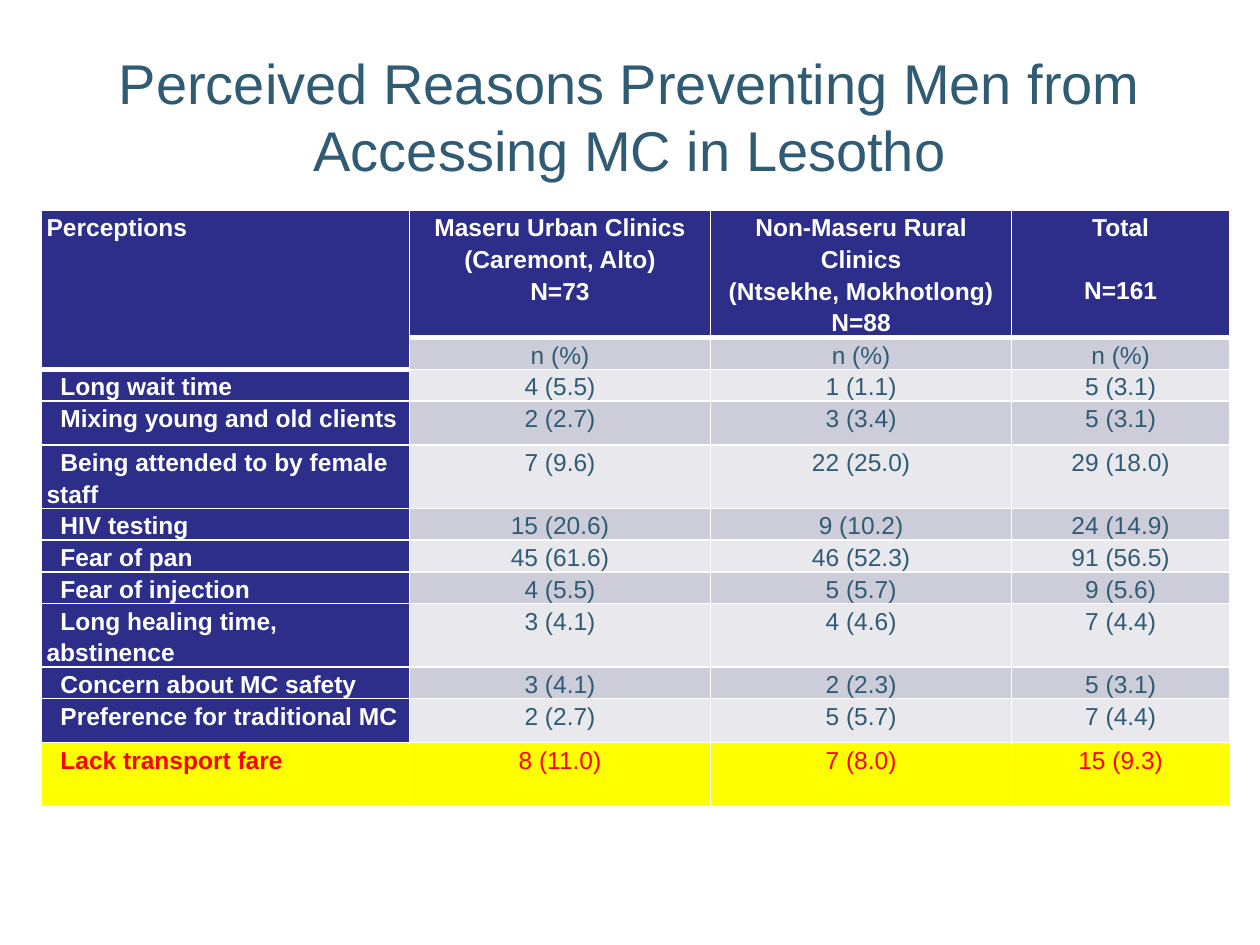
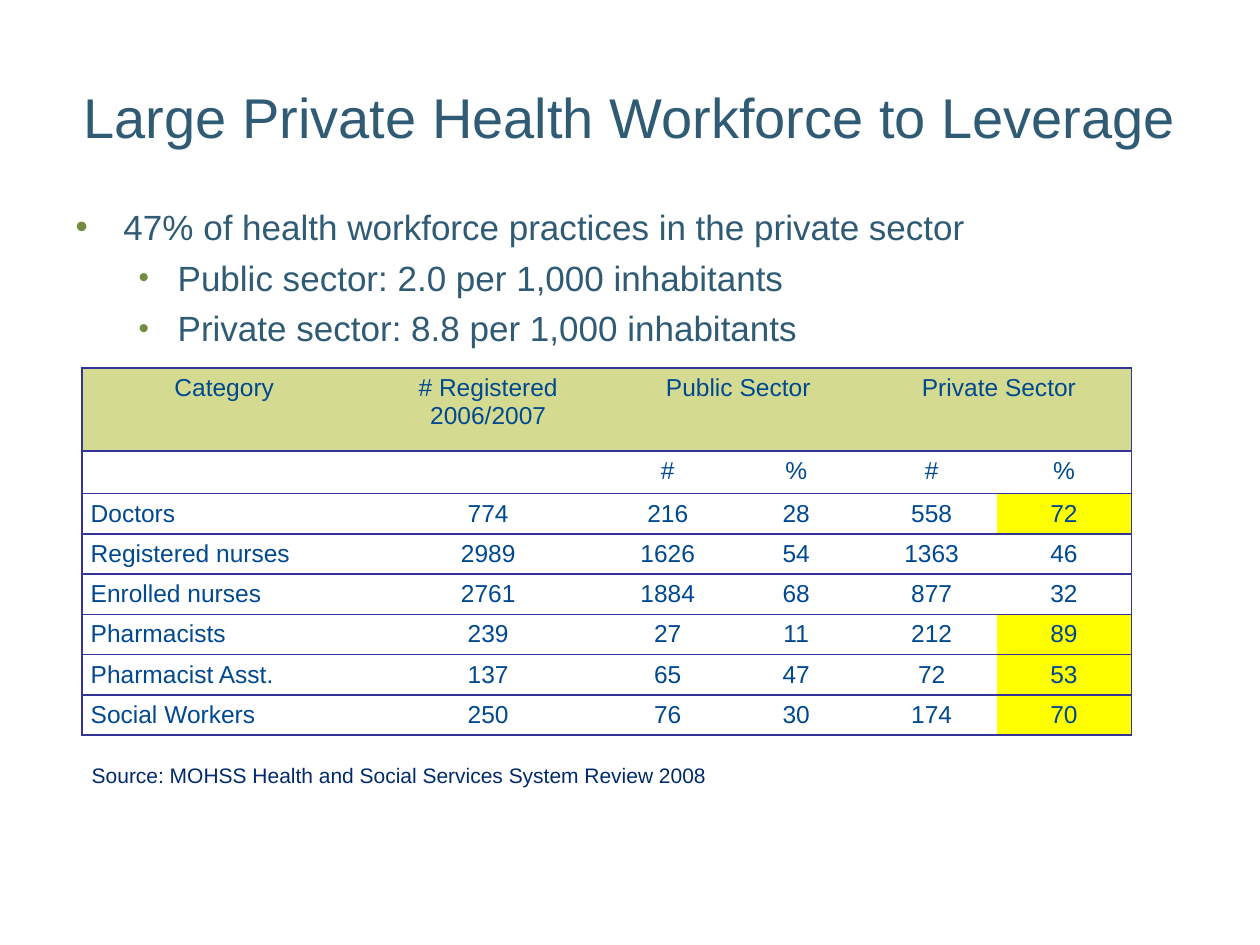
from lxml import etree
from pptx import Presentation
from pptx.dml.color import RGBColor
from pptx.enum.text import MSO_ANCHOR, MSO_AUTO_SIZE, PP_ALIGN
from pptx.oxml.ns import qn
from pptx.util import Inches, Pt

LEFT, CENTER = PP_ALIGN.LEFT, PP_ALIGN.CENTER
MIDDLE, TOP = MSO_ANCHOR.MIDDLE, MSO_ANCHOR.TOP
NO_FIT = MSO_AUTO_SIZE.NONE
TITLE_AND_BODY, TITLE_ONLY = 1, 5

COLORS = {
    "slate": "305B75", "white": "FFFFFF", "indigo": "2D2D8A",
    "band_dark": "CDCDDA", "band_light": "E8E8ED", "yellow": "FFFF00",
    "red": "FF0000", "bullet": "718C3F", "olive": "D4DB90",
    "blue": "004990", "rule": "333399", "navy": "002A6C",
}


class Deck:
    font = "Arial"

    def __init__(self):
        self.prs = Presentation()
        self.prs.slide_width, self.prs.slide_height = Inches(10), Inches(7.5)
        self.slide = None

    def place(self, shape, left, top, width, height):
        shape.left, shape.top = Inches(left), Inches(top)
        shape.width, shape.height = Inches(width), Inches(height)

    def run(self, paragraph, text, size, color, bold=False):
        run = paragraph.add_run()
        run.text = text
        run.font.name, run.font.size, run.font.bold = self.font, Pt(size), bold
        run.font.color.rgb = RGBColor.from_string(COLORS[color])

    def start(self, layout, title):
        self.slide = self.prs.slides.add_slide(self.prs.slide_layouts[layout])
        heading = self.slide.shapes.title
        self.place(heading, 0.5, 0.42, 9, 1)
        frame = heading.text_frame
        frame.auto_size, frame.vertical_anchor = NO_FIT, MIDDLE
        frame.paragraphs[0].alignment = CENTER
        self.run(frame.paragraphs[0], title, 32, "slate")

    def bullets(self, box, items):
        body = self.slide.placeholders[1]
        self.place(body, *box)
        frame = body.text_frame
        frame.auto_size, frame.vertical_anchor = NO_FIT, TOP
        for index, (level, text) in enumerate(items):
            paragraph = frame.add_paragraph() if index else frame.paragraphs[0]
            paragraph.level = level
            paragraph.space_before = Pt(5 if index else 0)
            margin, hanging, percent = ((0.38, 0.38, 100), (0.81, 0.31, 85))[level]
            props = paragraph._p.get_or_add_pPr()
            props.set("marL", str(Inches(margin)))
            props.set("indent", str(-Inches(hanging)))
            tint = etree.SubElement(props, qn("a:buClr"))
            etree.SubElement(tint, qn("a:srgbClr"), val=COLORS["bullet"])
            etree.SubElement(props, qn("a:buSzPct"), val=str(percent * 1000))
            etree.SubElement(props, qn("a:buFont"), typeface=self.font)
            etree.SubElement(props, qn("a:buChar"), char="•")
            self.run(paragraph, text, 20, "slate")

    def note(self, box, text):
        frame = self.slide.shapes.add_textbox(*map(Inches, box)).text_frame
        frame.word_wrap = True
        self.run(frame.paragraphs[0], text, 12, "navy")

    def table(self, left, top, widths, heights):
        table = self.slide.shapes.add_table(
            len(heights), len(widths), Inches(left), Inches(top),
            Inches(sum(widths)), Inches(sum(heights))).table
        table.first_row = table.horz_banding = False
        for column, width in zip(table.columns, widths):
            column.width = Inches(width)
        for row, height in zip(table.rows, heights):
            row.height = Inches(height)
        return table

    def cell(self, cell, lines, fill, color, borders, margins, line_color,
             bold=False, align=CENTER, spacing=1.0, indent=0, gap_before=None):
        props = cell._tc.get_or_add_tcPr()
        for side, width in zip("LRTB", borders):
            line = etree.SubElement(props, qn(f"a:ln{side}"), w=str(Pt(width)))
            if width:
                solid = etree.SubElement(line, qn("a:solidFill"))
                etree.SubElement(solid, qn("a:srgbClr"), val=COLORS[line_color])
            else:
                etree.SubElement(line, qn("a:noFill"))
        cell.fill.solid()
        cell.fill.fore_color.rgb = RGBColor.from_string(COLORS[fill])
        cell.margin_left = cell.margin_right = Inches(margins[0])
        cell.margin_top = cell.margin_bottom = Inches(margins[1])
        frame = cell.text_frame
        for index, text in enumerate(lines or [""]):
            paragraph = frame.add_paragraph() if index else frame.paragraphs[0]
            paragraph.alignment, paragraph.line_spacing = align, spacing
            if indent:
                paragraph._p.get_or_add_pPr().set("indent", str(Inches(indent)))
            if index and gap_before:
                paragraph.space_before = Pt(gap_before)
            if text:
                self.run(paragraph, text, 14, color, bold)
            else:
                etree.SubElement(paragraph._p, qn("a:endParaRPr"), sz="1400")


def perceptions_slide(deck):
    deck.start(TITLE_ONLY, "Perceived Reasons Preventing Men from Accessing MC in Lesotho")
    header = [
        ["Perceptions"],
        ["Maseru Urban Clinics", "(Caremont, Alto)", "N=73"],
        ["Non-Maseru Rural Clinics", "(Ntsekhe, Mokhotlong)", "N=88"],
        ["Total", "N=161"],
    ]
    reasons = [
        ("Long wait time", "4 (5.5)", "1 (1.1)", "5 (3.1)"),
        ("Mixing young and old clients", "2 (2.7)", "3 (3.4)", "5 (3.1)"),
        ("Being attended to by female staff", "7 (9.6)", "22 (25.0)", "29 (18.0)"),
        ("HIV testing", "15 (20.6)", "9 (10.2)", "24 (14.9)"),
        ("Fear of pan", "45 (61.6)", "46 (52.3)", "91 (56.5)"),
        ("Fear of injection", "4 (5.5)", "5 (5.7)", "9 (5.6)"),
        ("Long healing time, abstinence", "3 (4.1)", "4 (4.6)", "7 (4.4)"),
        ("Concern about MC safety", "3 (4.1)", "2 (2.3)", "5 (3.1)"),
        ("Preference for traditional MC", "2 (2.7)", "5 (5.7)", "7 (4.4)"),
        ("Lack transport fare", "8 (11.0)", "7 (8.0)", "15 (9.3)"),
    ]
    units = [[]] + [["n (%)"]] * 3
    rows = [header, units] + [[[text] for text in reason] for reason in reasons]
    heights = [1.01, 0.25, 0.25, 0.35, 0.5, 0.25, 0.25, 0.25, 0.5, 0.25, 0.35, 0.5]
    table = deck.table(0.33, 1.67, [2.92, 2.39, 2.39, 1.73], heights)
    table.cell(0, 0).merge(table.cell(1, 0))

    def rule_below(row, col):
        return 3 if row == 0 or (row, col) == (1, 0) else 1

    for r, row in enumerate(rows):
        for c, lines in enumerate(row):
            is_label = c == 0
            if r == len(rows) - 1:
                fill, color = "yellow", "red"
            elif r == 0 or is_label:
                fill, color = "indigo", "white"
            else:
                fill, color = ("band_light", "band_dark")[r % 2], "slate"
            deck.cell(
                table.cell(r, c), lines, fill, color,
                (1, 1, rule_below(r - 1, c), rule_below(r, c)), (0.04, 0), "white",
                bold=r == 0 or is_label, align=LEFT if is_label else CENTER,
                spacing=1.15, indent=0.11 if is_label and r > 1 else 0,
                gap_before=18 if lines and lines[0] == "Total" else None)


def workforce_slide(deck):
    deck.start(TITLE_AND_BODY, "Large Private Health Workforce to Leverage")
    deck.bullets((0.5, 1.58, 9, 4.5), [
        (0, "47% of health workforce practices in the private sector"),
        (1, "Public sector: 2.0 per 1,000 inhabitants"),
        (1, "Private sector: 8.8 per 1,000 inhabitants"),
    ])
    rows = [
        ("Category", "# Registered 2006/2007", "Public Sector", "", "Private Sector", ""),
        ("", "", "#", "%", "#", "%"),
        ("Doctors", 774, 216, 28, 558, 72),
        ("Registered nurses", 2989, 1626, 54, 1363, 46),
        ("Enrolled nurses", 2761, 1884, 68, 877, 32),
        ("Pharmacists", 239, 27, 11, 212, 89),
        ("Pharmacist Asst.", 137, 65, 47, 72, 53),
        ("Social Workers", 250, 76, 30, 174, 70),
    ]
    table = deck.table(0.65, 2.92, [2.26, 1.93, 0.92, 1.12, 1.03, 1.07],
                       [0.66] + [0.32] * (len(rows) - 1))
    for first in (2, 4):
        table.cell(0, first).merge(table.cell(0, first + 1))
    last = len(rows[0]) - 1
    for r, row in enumerate(rows):
        for c, value in enumerate(row):
            private_majority = r > 1 and c == last and value > 50
            fill = "olive" if r == 0 else "yellow" if private_majority else "white"
            right_edge = c == last or (r == 0 and c == last - 1)
            deck.cell(
                table.cell(r, c), [str(value)], fill, "blue",
                (int(c == 0), int(right_edge), 1, 1), (0.07, 0.05), "rule",
                align=LEFT if c == 0 and r > 1 else CENTER)
    deck.note((0.63, 6, 6.67, 0.3),
              "Source: MOHSS Health and Social Services System Review 2008")


def main():
    deck = Deck()
    perceptions_slide(deck)
    workforce_slide(deck)
    deck.prs.save("out.pptx")


if __name__ == "__main__":
    main()
